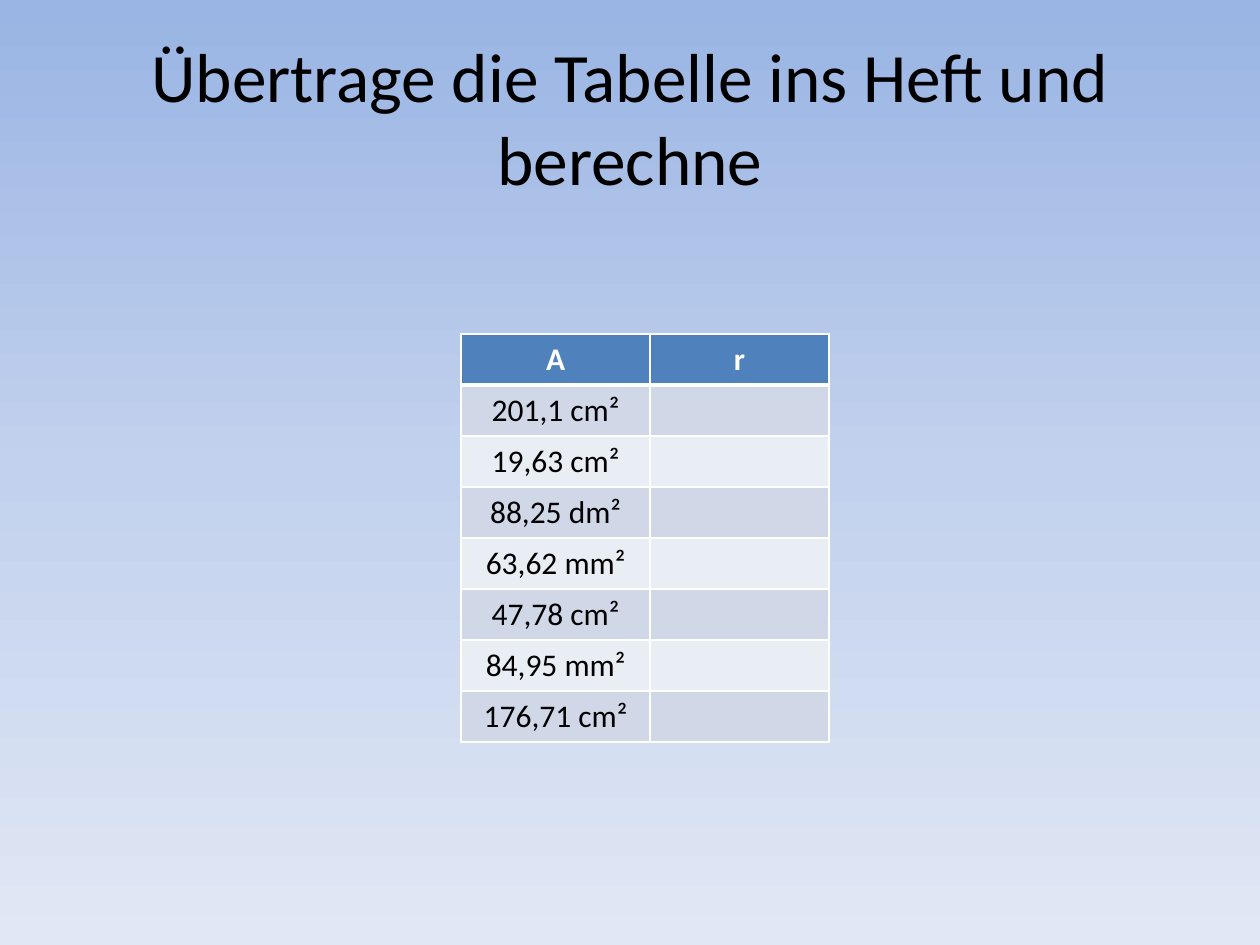
from lxml.etree import SubElement
from pptx import Presentation
from pptx.dml.color import RGBColor
from pptx.enum.text import MSO_ANCHOR, PP_ALIGN
from pptx.oxml.ns import qn
from pptx.util import Inches, Pt

FONT = "Calibri"
BLACK = RGBColor(0x00, 0x00, 0x00)
WHITE = RGBColor(0xFF, 0xFF, 0xFF)
HEADER = RGBColor(0x4F, 0x81, 0xBD)
BANDS = (RGBColor(0xD0, 0xD8, 0xE8), RGBColor(0xE9, 0xED, 0xF4))
SKY = (
    (0, RGBColor(0x9A, 0xB5, 0xE4)),
    (50, RGBColor(0xC2, 0xD1, 0xED)),
    (100, RGBColor(0xE1, 0xE8, 0xF5)),
)

HEADINGS = ("A", "r")
AREAS = ("201,1 cm²", "19,63 cm²", "88,25 dm²", "63,62 mm²",
         "47,78 cm²", "84,95 mm²", "176,71 cm²")
COL_WIDTHS = (1.5, 1.42)
ROW_HEIGHT = 0.405


def set_background(s):
    fill = s.background.fill
    fill.gradient()
    fill.gradient_angle = 270
    stops = s.element.find(".//" + qn("a:gsLst"))
    for old in list(stops):
        stops.remove(old)
    for percent, color in SKY:
        stop = SubElement(stops, qn("a:gs"), pos=str(percent * 1000))
        SubElement(stop, qn("a:srgbClr"), val=str(color))


def write(tf, text, size, color, bold=False):
    tf.text = text
    p = tf.paragraphs[0]
    p.alignment = PP_ALIGN.CENTER
    font = p.font
    if p.runs:
        font = p.runs[0].font
    font.name, font.size, font.bold = FONT, Pt(size), bold
    font.color.rgb = color


def add_title(s, text, left, top, width, height):
    sp = s.shapes.add_textbox(Inches(left), Inches(top), Inches(width), Inches(height))
    tf = sp.text_frame
    tf.word_wrap = True
    tf.vertical_anchor = MSO_ANCHOR.MIDDLE
    write(tf, text, 39.6, BLACK)


def set_borders(cell, top, bottom):
    tc_pr = cell._tc.get_or_add_tcPr()
    for side, width in (("L", 1), ("R", 1), ("T", top), ("B", bottom)):
        line = SubElement(tc_pr, qn(f"a:ln{side}"), w=str(Pt(width)))
        fill = SubElement(line, qn("a:solidFill"))
        SubElement(fill, qn("a:srgbClr"), val=str(WHITE))


def add_exercise_table(s, left, top):
    rows = [HEADINGS] + [(area, "") for area in AREAS]
    table = s.shapes.add_table(
        len(rows), len(HEADINGS), Inches(left), Inches(top),
        Inches(sum(COL_WIDTHS)), Inches(ROW_HEIGHT * len(rows))).table
    for column, width in zip(table.columns, COL_WIDTHS):
        column.width = Inches(width)
    for i, values in enumerate(rows):
        table.rows[i].height = Inches(ROW_HEIGHT)
        is_header = i == 0
        for j, value in enumerate(values):
            cell = table.cell(i, j)
            # A thick rule separates the header from the body
            set_borders(cell, top=3 if i == 1 else 1, bottom=3 if is_header else 1)
            cell.fill.solid()
            cell.fill.fore_color.rgb = HEADER if is_header else BANDS[(i - 1) % 2]
            write(cell.text_frame, value, 18, WHITE if is_header else BLACK, is_header)


def main():
    prs = Presentation()
    prs.slide_width, prs.slide_height = Inches(10), Inches(7.5)
    s = prs.slides.add_slide(prs.slide_layouts[6])
    set_background(s)
    # Task heading
    add_title(s, "Übertrage die Tabelle ins Heft und berechne", 0.5, 0.3, 9, 1.25)
    # Areas given, radii to be filled in
    add_exercise_table(s, 3.66, 2.65)
    prs.save("out.pptx")


if __name__ == "__main__":
    main()
